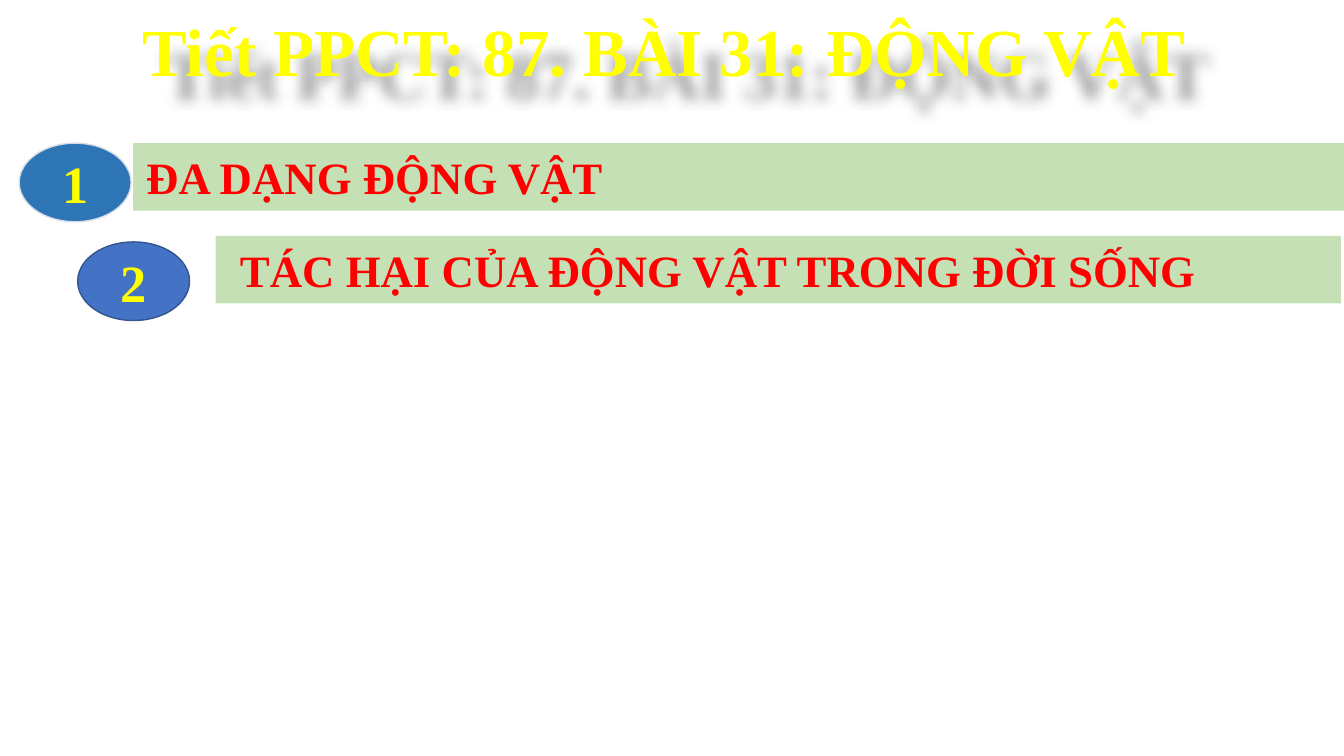
from lxml import etree
from pptx import Presentation
from pptx.dml.color import RGBColor
from pptx.enum.shapes import MSO_SHAPE
from pptx.enum.text import MSO_ANCHOR, MSO_AUTO_SIZE, PP_ALIGN
from pptx.oxml import parse_xml
from pptx.oxml.ns import nsdecls, qn
from pptx.util import Inches, Pt

YELLOW = RGBColor(0xFF, 0xFF, 0x00)
RED = RGBColor(0xFF, 0x00, 0x00)
ORANGE = RGBColor(0xED, 0x7D, 0x31)
GREEN = RGBColor(0xC5, 0xE0, 0xB4)
BLUE = RGBColor(0x2E, 0x75, 0xB6)
INDIGO = RGBColor(0x44, 0x72, 0xC4)
PALE_EDGE = RGBColor(0xD6, 0xDC, 0xE5)
DARK_EDGE = RGBColor(0x32, 0x54, 0x91)


class LessonSlide:
    font_name = "Times New Roman"
    badge_size = (1.11, 0.78)
    bar_height = 0.67

    def __init__(self, presentation):
        self.slide = presentation.slides.add_slide(presentation.slide_layouts[6])

    def add_text(self, shape, text, size, color, alignment, outlined=False):
        paragraph = shape.text_frame.paragraphs[0]
        paragraph.alignment = alignment
        run = paragraph.add_run()
        run.text = text
        values = {"name": self.font_name, "size": Pt(size), "bold": True}
        for name, value in values.items():
            setattr(run.font, name, value)
        run.font.color.rgb = color
        if outlined:
            run.font._element.insert(0, parse_xml(
                f'<a:ln {nsdecls("a")} w="{Pt(1.75)}"><a:solidFill>'
                f'<a:srgbClr val="{ORANGE}"/></a:solidFill></a:ln>'))

    def fit_frame(self, shape, left=0.13, right=0.13):
        """Set the insets, top anchor and grow-to-fit of a line of text."""
        values = {
            "margin_left": Inches(left), "margin_right": Inches(right),
            "margin_top": Inches(0.07), "margin_bottom": Inches(0.07),
            "word_wrap": True, "vertical_anchor": MSO_ANCHOR.TOP,
            "auto_size": MSO_AUTO_SIZE.SHAPE_TO_FIT_TEXT,
        }
        for name, value in values.items():
            setattr(shape.text_frame, name, value)

    def title(self, text):
        shape = self.slide.shapes.add_textbox(
            Inches(0.03), Inches(0.02), Inches(13.28), Inches(0.94))
        self.fit_frame(shape, right=0.3)
        self.add_text(shape, text, 48, YELLOW, PP_ALIGN.CENTER, outlined=True)
        effects = etree.SubElement(shape._element.spPr, qn("a:effectLst"))
        effects.append(parse_xml(
            f'<a:outerShdw {nsdecls("a")} blurRad="{Inches(0.14)}" '
            f'dist="{Inches(0.3)}" dir="2700000" algn="tl" rotWithShape="0">'
            '<a:srgbClr val="000000"><a:alpha val="40000"/></a:srgbClr>'
            '</a:outerShdw>'))

    def filled_shape(self, kind, left, top, width, height, fill):
        shape = self.slide.shapes.add_shape(
            kind, Inches(left), Inches(top), Inches(width), Inches(height))
        shape.shadow.inherit = False
        shape.fill.solid()
        shape.fill.fore_color.rgb = fill
        return shape

    def badge(self, number, left, top, fill, edge):
        shape = self.filled_shape(MSO_SHAPE.OVAL, left, top, *self.badge_size, fill)
        shape.line.color.rgb = edge
        shape.line.width = Pt(1)
        shape.text_frame.vertical_anchor = MSO_ANCHOR.MIDDLE
        self.add_text(shape, number, 37.4, YELLOW, PP_ALIGN.CENTER)

    def bar(self, text, left, top, width, indent):
        shape = self.filled_shape(
            MSO_SHAPE.RECTANGLE, left, top, width, self.bar_height, GREEN)
        shape.line.fill.background()
        self.fit_frame(shape, left=indent)
        self.add_text(shape, text, 32, RED, PP_ALIGN.LEFT, outlined=True)


def main():
    presentation = Presentation()
    presentation.slide_width = Inches(13.33)
    presentation.slide_height = Inches(7.5)
    lesson = LessonSlide(presentation)
    lesson.title("Tiết PPCT: 87. BÀI 31: ĐỘNG VẬT")
    lesson.badge("1", 0.19, 1.42, BLUE, PALE_EDGE)
    lesson.bar("ĐA DẠNG ĐỘNG VẬT", 1.32, 1.42, 12.02, 0.13)
    lesson.badge("2", 0.77, 2.4, INDIGO, DARK_EDGE)
    lesson.bar("TÁC HẠI CỦA ĐỘNG VẬT TRONG ĐỜI SỐNG", 2.14, 2.34, 11.16, 0.24)
    presentation.save("out.pptx")


if __name__ == "__main__":
    main()
